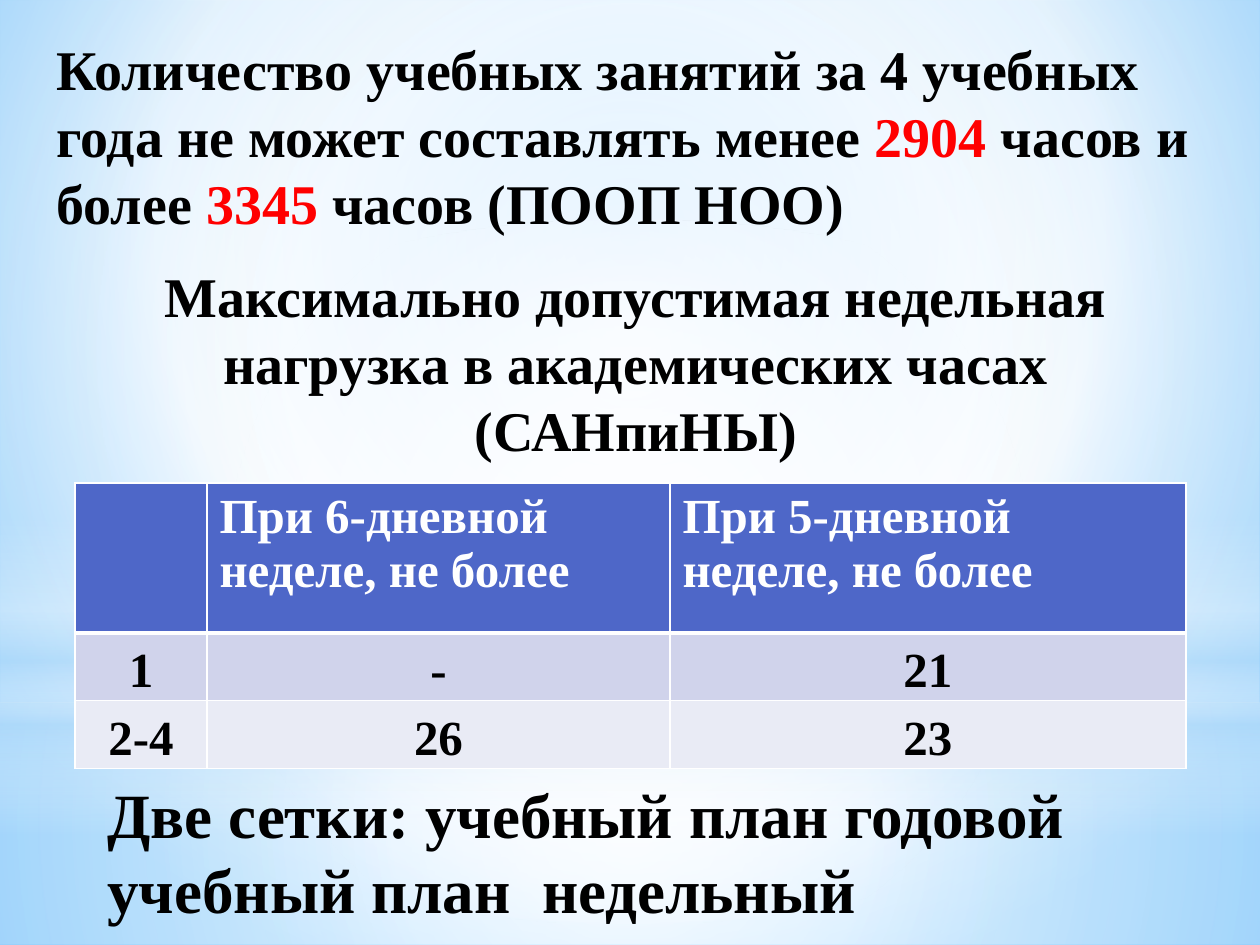
from lxml import etree
from pptx import Presentation
from pptx.dml.color import RGBColor
from pptx.enum.shapes import MSO_SHAPE
from pptx.enum.text import MSO_ANCHOR, PP_ALIGN
from pptx.oxml import parse_xml
from pptx.oxml.ns import nsdecls, qn
from pptx.util import Pt

RECT, OVAL = MSO_SHAPE.RECTANGLE, MSO_SHAPE.OVAL
LEFT, CENTER = PP_ALIGN.LEFT, PP_ALIGN.CENTER
MIDDLE = MSO_ANCHOR.MIDDLE

PX = 914400 / 126
W, H = 1260, 945
FONT = "Times New Roman"

BLACK = RGBColor(0x00, 0x00, 0x00)
WHITE = RGBColor(0xFF, 0xFF, 0xFF)
RED = RGBColor(0xFF, 0x00, 0x00)
HEADER = RGBColor(0x4E, 0x67, 0xC8)
BAND_DARK = RGBColor(0xD0, 0xD3, 0xEB)
BAND_LIGHT = RGBColor(0xE9, 0xEB, 0xF5)
SKY = RGBColor(0x9E, 0xD5, 0xFF)
SKY_DEEP = RGBColor(0x5B, 0xB9, 0xFF)
HAZE = RGBColor(0xB4, 0xDC, 0xFA)


def px(*lengths):
    return [int(n * PX) for n in lengths]


def set_gradient(parent, stops, focus=None):
    """Stops are (position %, colour, opacity %); without focus it runs down."""
    gs = "".join(
        f'<a:gs pos="{pos * 1000}"><a:srgbClr val="{color}">'
        f'<a:alpha val="{alpha * 1000}"/></a:srgbClr></a:gs>'
        for pos, color, alpha in stops)
    if focus:
        l, t, r, b = (n * 1000 for n in focus)
        run = (f'<a:path path="circle"><a:fillToRect l="{l}" t="{t}" '
               f'r="{r}" b="{b}"/></a:path>')
    else:
        run = '<a:lin ang="5400000" scaled="0"/>'
    old = parent.find(qn("a:gradFill"))
    parent.replace(old, parse_xml(
        f'<a:gradFill {nsdecls("a")} rotWithShape="1">'
        f'<a:gsLst>{gs}</a:gsLst>{run}</a:gradFill>'))


def add_glow(slide, kind, box, stops, focus=None):
    sp = slide.shapes.add_shape(kind, *px(*box))
    sp.shadow.inherit = False
    sp.line.fill.background()
    sp.fill.gradient()
    set_gradient(sp.element.spPr, stops, focus)


def add_background(slide, box):
    x, y, w, h = box
    slide.background.fill.gradient()
    set_gradient(slide.element.find(".//" + qn("p:bgPr")),
                 [(0, SKY, 100), (60, WHITE, 100), (100, SKY_DEEP, 100)],
                 (20, 10, 20, 60))
    center = (50, 50, 50, 50)
    horizon = 703
    # Lower and upper haze
    add_glow(slide, RECT, (x, y + horizon, w, h - horizon),
             [(0, WHITE, 91), (37, WHITE, 76), (100, HAZE, 79)], center)
    add_glow(slide, RECT, (x, y, w, horizon),
             [(0, WHITE, 89), (48, WHITE, 62), (100, HAZE, 79)], center)
    # Horizon band and central light
    add_glow(slide, RECT, (x, y + 519, w, 315),
             [(0, WHITE, 0), (29, WHITE, 30), (45, HAZE, 40),
              (55, WHITE, 26), (65, HAZE, 60), (100, WHITE, 0)])
    add_glow(slide, OVAL, (x, y + 220, w, horizon),
             [(0, WHITE, 100), (56, WHITE, 0)], center)


def format_run(r, size, color):
    r.font.name = FONT
    r.font.size = Pt(size)
    r.font.bold = True
    r.font.color.rgb = color


def add_text(slide, box, paragraphs, size, align=LEFT):
    """Each paragraph is a list of (text, colour) runs."""
    tf = slide.shapes.add_textbox(*px(*box)).text_frame
    tf.word_wrap = True
    for i, runs in enumerate(paragraphs):
        p = tf.add_paragraph() if i else tf.paragraphs[0]
        p.alignment = align
        for text, color in runs:
            r = p.add_run()
            r.text = text
            format_run(r, size, color)


def set_borders(cell, widths):
    tc_pr = cell._tc.get_or_add_tcPr()
    for i, (side, width) in enumerate(zip("LRTB", widths)):
        ln = etree.Element(qn("a:ln" + side), w=str(Pt(width)))
        fill = etree.SubElement(ln, qn("a:solidFill"))
        etree.SubElement(fill, qn("a:srgbClr"), val=str(WHITE))
        tc_pr.insert(i, ln)


def add_load_table(slide, box):
    rows = [["", "При 6-дневной неделе, не более",
             "При 5-дневной неделе, не более"],
            ["1", "-", "21"],
            ["2-4", "26", "23"]]
    fills = [HEADER, BAND_DARK, BAND_LIGHT]
    table = slide.shapes.add_table(3, 3, *px(*box)).table
    for col, width in zip(table.columns, px(132, 463, 516)):
        col.width = width
    for row, height in zip(table.rows, px(150, 67, 67)):
        row.height = height
    for i, texts in enumerate(rows):
        for j, text in enumerate(texts):
            cell = table.cell(i, j)
            cell.fill.solid()
            cell.fill.fore_color.rgb = fills[i]
            p = cell.text_frame.paragraphs[0]
            p.text = text
            for r in p.runs:
                format_run(r, 28, BLACK if i else WHITE)
            if i:
                cell.vertical_anchor = MIDDLE
                cell.margin_left = cell.margin_right = 0
                cell.margin_top = cell.margin_bottom = 0
                p.alignment = CENTER
                p.line_spacing = 1.15
            set_borders(cell, (1, 1, 3 if i == 1 else 1, 1 if i else 3))


def main():
    prs = Presentation()
    prs.slide_width, prs.slide_height = px(W, H)
    slide = prs.slides.add_slide(prs.slide_layouts[6])

    add_background(slide, (0, 0, W, H))
    # Limits over four years
    add_text(slide, (44, 28, 1191, 220), [[
        ("Количество учебных занятий за 4 учебных года "
         "не может составлять менее ", BLACK),
        ("2904", RED), (" часов и более ", BLACK),
        ("3345 ", RED), ("часов (ПООП НОО)", BLACK)]], 32)
    # Weekly load
    add_text(slide, (92, 255, 1088, 158), [[
        ("Максимально допустимая недельная нагрузка "
         "в академических часах (САНпиНЫ)", BLACK)]], 32, CENTER)
    add_load_table(slide, (75, 483, 1111, 284))
    # Two plans
    add_text(slide, (95, 769, 1091, 170), [
        [("Две сетки: учебный план годовой", BLACK)],
        [("учебный план  недельный", BLACK)]], 36)

    prs.save("out.pptx")


if __name__ == "__main__":
    main()
